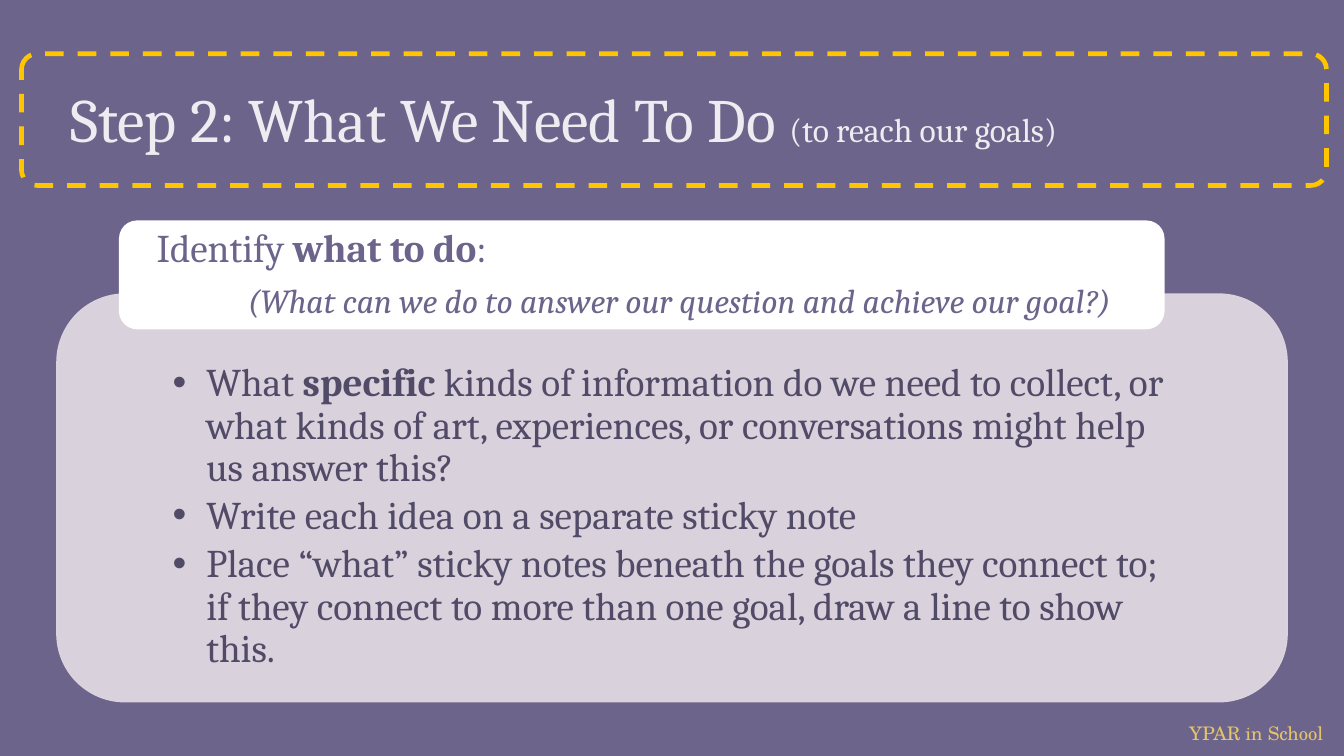
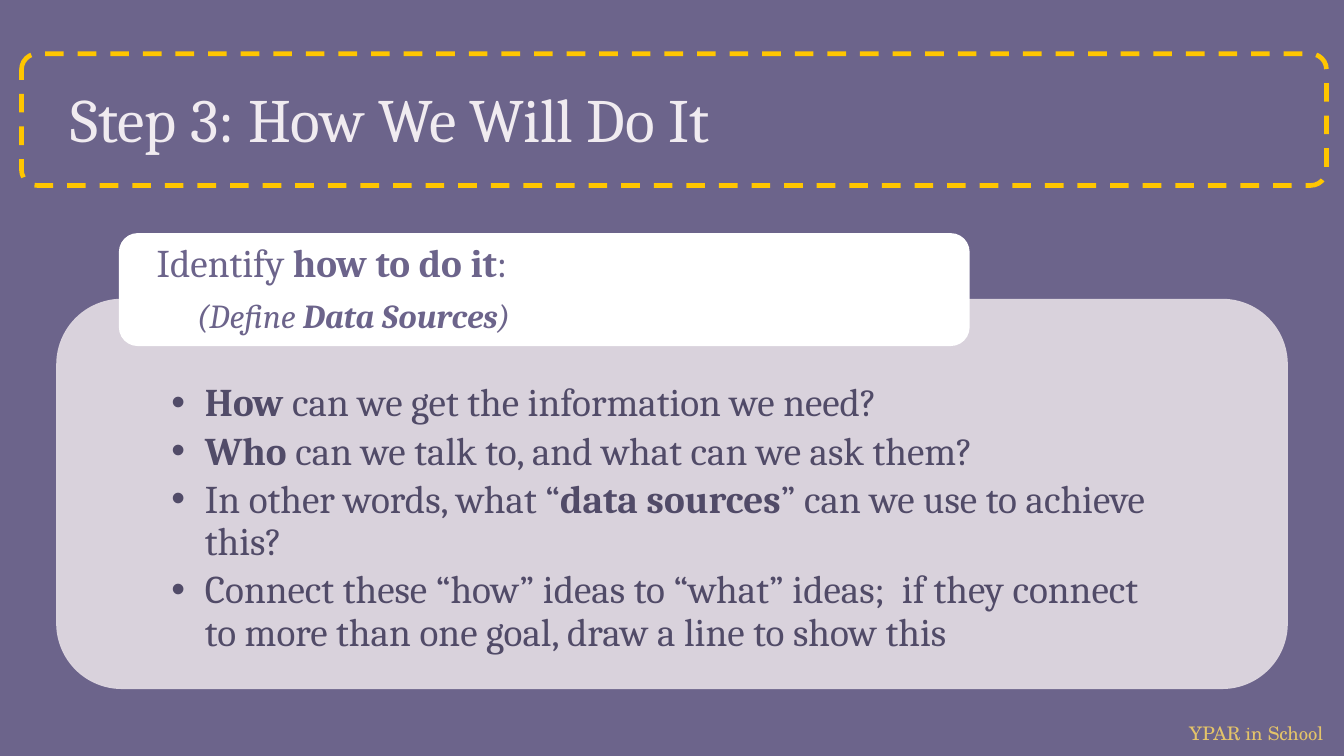
from lxml import etree
from pptx import Presentation
from pptx import util as u
from pptx.dml.color import RGBColor
from pptx.enum import dml, shapes, text
from pptx.oxml.ns import qn

PX = 4572  # 200 px to the inch
WIDTH, HEIGHT = 2000, 1125
SERIF, FOOTER_FONT, BULLET_FONT = "Cambria", "TeX Gyre Schola", "Arial"
PURPLE, DARK, PALE, GOLD = "6C648B", "514B68", "F0EBF0", "E4C469"
PANEL, PANEL_EDGE, WHITE, DASH = "E5DFE5", "DAD3DD", "FFFFFF", "FFC600"
TITLE_BOX = (85, 100, 1830, 150)
FRAME_BOX = (32, 80, 1942, 196)
FOOTER_BOX = (1750, 1064, 250, 54)


def rgb(value):
    return RGBColor.from_string(value)


def emu(*lengths):
    return [u.Emu(n * PX) for n in lengths]


def inset(box, gap):
    x, y, w, h = box
    return x + gap, y + gap, w - 2 * gap, h - 2 * gap


def round_rect(s, box, fill=None, alpha=None, line=None, width=1, adj=None):
    sp = s.shapes.add_shape(shapes.MSO_SHAPE.ROUNDED_RECTANGLE, *emu(*box))
    sp.shadow.inherit = False
    if adj is not None:
        sp.adjustments[0] = adj
    if fill:
        sp.fill.solid()
        sp.fill.fore_color.rgb = rgb(fill)
        if alpha:
            clr = sp.fill._xPr.find(qn("a:solidFill"))[0]
            etree.SubElement(clr, qn("a:alpha"), val=str(alpha * 1000))
    else:
        sp.fill.background()
    if line:
        sp.line.color.rgb = rgb(line)
        sp.line.width = u.Pt(width)
    else:
        sp.line.fill.background()
    return sp


def text_box(s, box, margins, anchor=text.MSO_ANCHOR.TOP, wrap=True):
    tf = s.shapes.add_textbox(*emu(*box)).text_frame
    tf.word_wrap = wrap
    tf.vertical_anchor = anchor
    for side, value in zip(("left", "top", "right", "bottom"), emu(*margins)):
        setattr(tf, "margin_" + side, value)
    return tf


def add_runs(p, marked, size, color, name=SERIF, italic=False):
    """Add the text to the paragraph; parts between asterisks are bold."""
    for i, part in enumerate(marked.split("*")):
        if part:
            r = p.add_run()
            r.text = part
            style = {"size": u.Pt(size), "name": name, "bold": i % 2 == 1, "italic": italic}
            for key, value in style.items():
                setattr(r.font, key, value)
            r.font.color.rgb = rgb(color)


def space(p, after):
    p.line_spacing = 0.9
    p.space_after = u.Pt(after)


def indent(p, **lengths):
    for key, px in lengths.items():
        p._p.get_or_add_pPr().set(key, str(px * PX))


def add_bullet(p):
    indent(p, marL=50, indent=-50)
    pPr = p._p.get_or_add_pPr()
    etree.SubElement(pPr, qn("a:buFont"), typeface=BULLET_FONT)
    etree.SubElement(pPr, qn("a:buChar"), char="•")


def add_footer(s, box):
    tf = text_box(s, box, (20, 10, 0, 10), wrap=False)
    add_runs(tf.paragraphs[0], "YPAR in School", 10, GOLD, FOOTER_FONT)


def add_title(s, box, title, aside):
    tf = text_box(s, box, (20, 20, 20, 20), text.MSO_ANCHOR.BOTTOM)
    add_runs(tf.paragraphs[0], title, 33, PALE)
    add_runs(tf.paragraphs[0], aside, 18, PALE)


def add_panel(s, box, top_margin, bullets):
    round_rect(s, box, PANEL, alpha=90, line=PANEL_EDGE)
    corner_gap = round(box[3] * 0.0488)  # keeps text clear of the rounded corners
    tf = text_box(s, inset(box, corner_gap), (142, top_margin, 142, 32))
    for i, bullet in enumerate(bullets):
        p = tf.paragraphs[0] if i == 0 else tf.add_paragraph()
        p.level = 1
        space(p, 3.15)
        add_bullet(p)
        add_runs(p, bullet, 21, DARK)


def add_tab(s, box, heading, question, align, margins):
    round_rect(s, box, WHITE)
    tf = text_box(s, inset(box, 8), (48, 0, 48, 0), text.MSO_ANCHOR.MIDDLE)
    first, second = tf.paragraphs[0], tf.add_paragraph()
    for p in (first, second):
        space(p, 7)
    second.alignment = align
    indent(second, **margins)
    add_runs(first, heading, 21, PURPLE)
    add_runs(second, question, 18, PURPLE, italic=True)


def add_frame(s, box):
    sp = round_rect(s, box, line=DASH, width=2.5, adj=0.12)
    sp.line.dash_style = dml.MSO_LINE.DASH


def step_slide(prs, title, panel, tab, aside=""):
    s = prs.slides.add_slide(prs.slide_layouts[6])
    s.background.fill.solid()
    s.background.fill.fore_color.rgb = rgb(PURPLE)
    add_footer(s, FOOTER_BOX)
    add_title(s, TITLE_BOX, title, aside)
    add_panel(s, **panel)
    add_tab(s, **tab)
    add_frame(s, FRAME_BOX)


def main():
    prs = Presentation()
    prs.slide_width, prs.slide_height = emu(WIDTH, HEIGHT)
    step_slide(
        prs,
        "Step 2: What We Need To Do ",
        aside="(to reach our goals)",
        panel={
            "box": (85, 438, 1830, 606),
            "top_margin": 72,
            "bullets": [
                "What *specific* kinds of information do we need to collect, or what kinds "
                "of art, experiences, or conversations might help us answer this?",
                "Write each idea on a separate sticky note",
                "Place “what” sticky notes beneath the goals they connect to; if they "
                "connect to more than one goal, draw a line to show this.",
            ],
        },
        tab={
            "box": (177, 328, 1556, 162),
            "heading": "Identify *what to do*:",
            "question": "(What can we do to answer our question and achieve our goal?)",
            "align": text.PP_ALIGN.RIGHT,
            "margins": {"marR": 24},
        },
    )
    step_slide(
        prs,
        "Step 3: How We Will Do It",
        panel={
            "box": (85, 446, 1830, 578),
            "top_margin": 96,
            "bullets": [
                "*How* can we get the information we need?",
                "*Who* can we talk to, and what can we ask them?",
                "In other words, what “*data sources*” can we use to achieve this?",
                "Connect these “how” ideas to “what” ideas;  if they connect to more "
                "than one goal, draw a line to show this",
            ],
        },
        tab={
            "box": (177, 347, 1266, 168),
            "heading": "Identify *how to do it*:",
            "question": "(Define *Data Sources*)",
            "align": text.PP_ALIGN.LEFT,
            "margins": {"marL": 60},
        },
    )
    prs.save("out.pptx")


if __name__ == "__main__":
    main()
